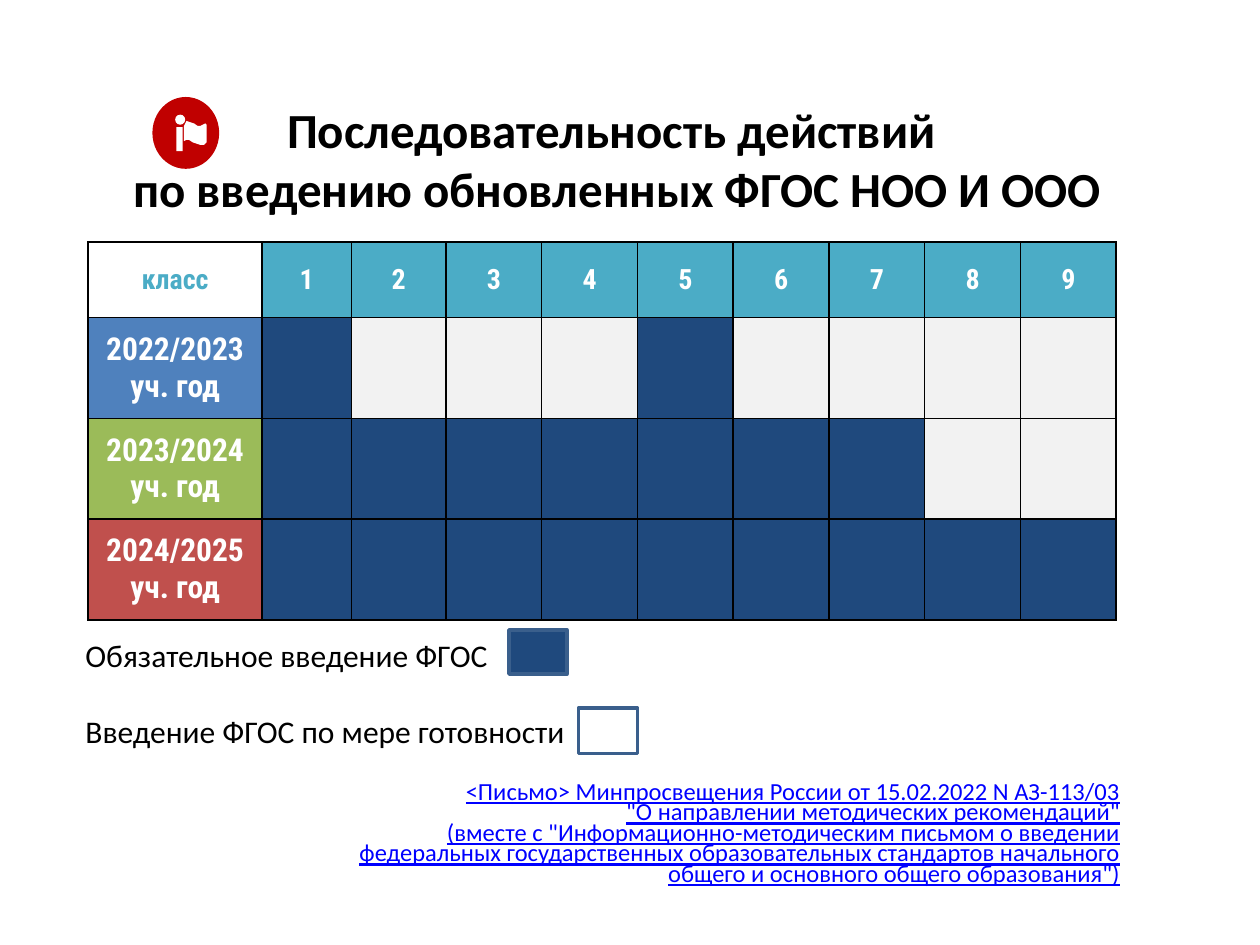
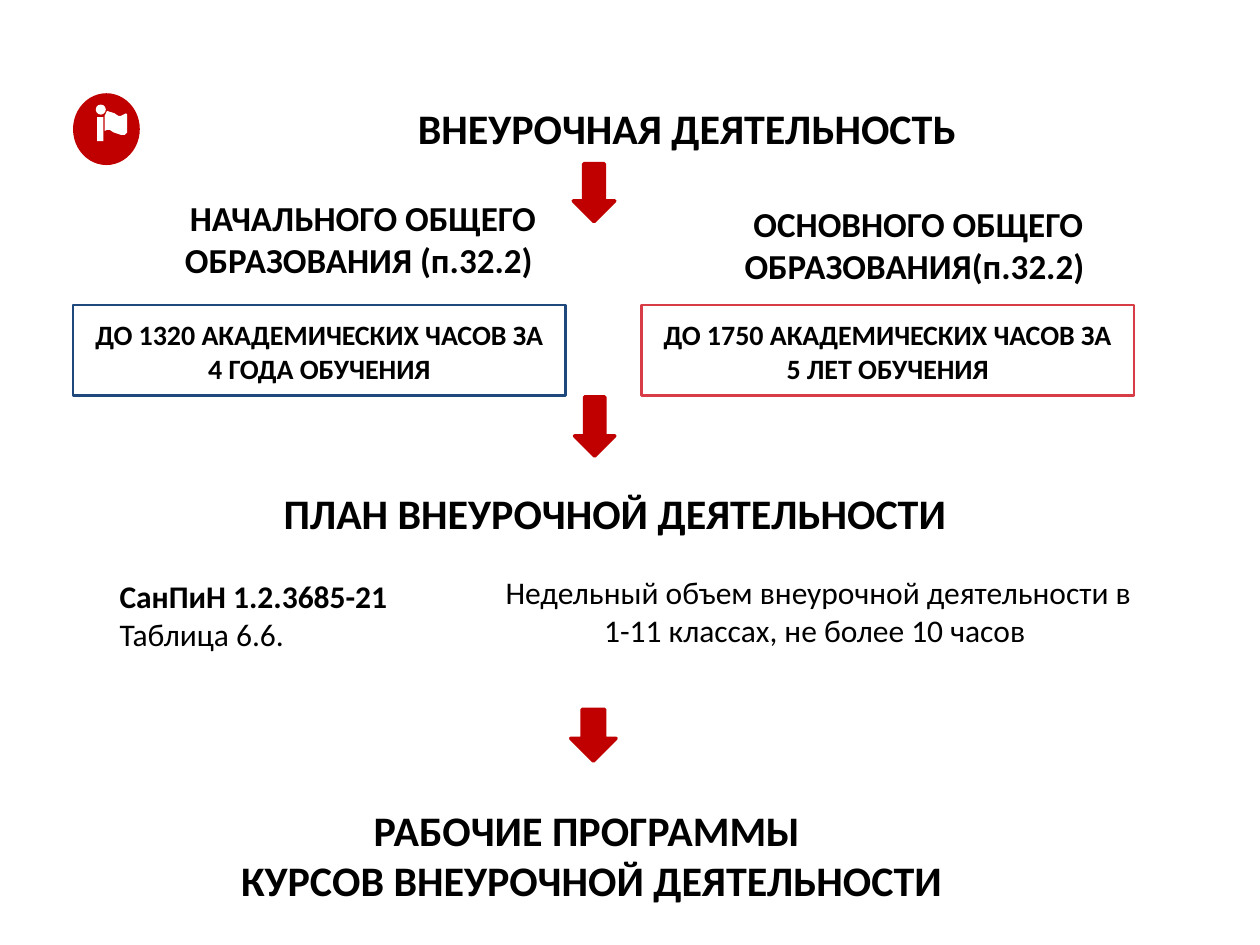
"""Build two slides on introducing the updated school education standards."""
from lxml import etree
from pptx import Presentation
from pptx import util as u
from pptx.dml.color import RGBColor
from pptx.enum import shapes, text
from pptx.oxml.ns import qn

RED, NAVY, BLACK, WHITE = "C00000", "1F497D", "000000", "FFFFFF"
TEAL, PALE, LINK, LEGEND_LINE = "4BACC6", "F2F2F2", "0000FF", "3A5F8C"
BODY_FONT, TABLE_FONT = "Calibri", "Roboto Condensed"
CENTER, LEFT, RIGHT = text.PP_ALIGN.CENTER, text.PP_ALIGN.LEFT, text.PP_ALIGN.RIGHT
TOP, MIDDLE = text.MSO_ANCHOR.TOP, text.MSO_ANCHOR.MIDDLE
RECTANGLE, OVAL = shapes.MSO_SHAPE.RECTANGLE, shapes.MSO_SHAPE.OVAL

TITLE = ["Последовательность действий ", "по введению обновленных ФГОС НОО И ООО"]
GRADES = range(1, 10)
SCHOOL_YEARS = [
    ("2022/2023 уч. год", "4F81BD", {1, 5}),
    ("2023/2024 уч. год", "9BBB59", set(range(1, 8))),
    ("2024/2025 уч. год", "C0504D", set(GRADES)),
]
COLUMN_WIDTHS = [1.38, 0.71, 0.75] + [0.76] * 7
ROW_HEIGHTS = [0.6] + [0.78] * 3
LEGEND = ["Обязательное введение ФГОС", "Введение ФГОС по мере готовности"]
LEGEND_KEYS = [((4.04, 5, 0.46, 0.35), NAVY), ((4.59, 5.62, 0.47, 0.36), WHITE)]
LETTER = (
    "<Письмо> Минпросвещения России от 15.02.2022 N АЗ-113/03",
    '"О направлении методических рекомендаций"',
    '(вместе с "Информационно-методическим письмом о введении федеральных '
    'государственных образовательных стандартов начального общего и основного '
    'общего образования")',
)

HEADINGS = [
    ((2.01, 0.71, 6.96, 0.62), 24, TOP, ["ВНЕУРОЧНАЯ ДЕЯТЕЛЬНОСТЬ "]),
    ((0.47, 1.46, 4.82, 0.83), 20, TOP, ["НАЧАЛЬНОГО ОБЩЕГО", "ОБРАЗОВАНИЯ (п.32.2) "]),
    ((4.88, 1.51, 4.82, 0.83), 20, TOP, ["ОСНОВНОГО ОБЩЕГО", "ОБРАЗОВАНИЯ(п.32.2) "]),
    ((1.4, 3.77, 6.96, 0.62), 24, TOP, ["ПЛАН ВНЕУРОЧНОЙ ДЕЯТЕЛЬНОСТИ"]),
    ((0.58, 6.3, 8.23, 0.97), 24, MIDDLE,
     ["РАБОЧИЕ ПРОГРАММЫ ", "КУРСОВ ВНЕУРОЧНОЙ ДЕЯТЕЛЬНОСТИ"]),
]
HOUR_LIMITS = [
    (0.58, NAVY, "ДО 1320 АКАДЕМИЧЕСКИХ ЧАСОВ ЗА 4 ГОДА ОБУЧЕНИЯ"),
    (5.09, "D83C47", "ДО 1750 АКАДЕМИЧЕСКИХ ЧАСОВ ЗА 5 ЛЕТ ОБУЧЕНИЯ"),
]
ARROWS = [(4.55, 1.3, 0.33, 0.46), (4.56, 3.15, 0.32, 0.47), (4.53, 5.63, 0.36, 0.41)]
WEEKLY_LIMIT = "Недельный объем внеурочной деятельности в 1-11 классах, не более 10 часов "
REGULATION = ["СанПиН 1.2.3685-21", "Таблица 6.6."]
FLAG_OUTLINE = [(0.02, 0), (0.05, 0.01), (0.08, 0.02), (0.11, 0.04), (0.13, 0.04),
                (0.15, 0.03), (0.17, 0.02), (0.18, 0.03), (0.18, 0.17), (0.16, 0.19),
                (0.13, 0.19), (0.1, 0.18), (0.07, 0.17), (0.04, 0.15), (0.02, 0.15),
                (0, 0.16), (0, 0.04)]


def color(code):
    return RGBColor.from_string(code)


def place(box):
    return [u.Inches(length) for length in box]


def write(paragraph, lines, size, ink=BLACK, bold=False, align=LEFT,
          font=BODY_FONT, underline=False):
    paragraph.alignment = align
    for index, line in enumerate(lines):
        if index:
            paragraph.add_line_break()
        run = paragraph.add_run()
        run.text = line
        run.font.size, run.font.name = u.Pt(size), font
        run.font.bold, run.font.underline = bold, underline
        run.font.color.rgb = color(ink)


def set_margins(target, side, vertical):
    target.margin_left = target.margin_right = u.Inches(side)
    target.margin_top = target.margin_bottom = u.Inches(vertical)


def prepare(shape, anchor=TOP, vertical=0.1):
    frame = shape.text_frame
    frame.word_wrap, frame.vertical_anchor = True, anchor
    set_margins(frame, 0.1, vertical)
    return frame


def add_text(slide, box, paragraphs, size, anchor=TOP, vertical=0.1, **style):
    frame = prepare(slide.shapes.add_textbox(*place(box)), anchor, vertical)
    for index, words in enumerate(paragraphs):
        paragraph = frame.add_paragraph() if index else frame.paragraphs[0]
        write(paragraph, [words], size, **style)
    return frame


def paint(shape, fill=None, line=None, width=1):
    shape.shadow.inherit = False
    if fill:
        shape.fill.solid()
        shape.fill.fore_color.rgb = color(fill)
    else:
        shape.fill.background()
    if line:
        shape.line.color.rgb = color(line)
        shape.line.width = u.Pt(width)
    else:
        shape.line.fill.background()


def add_shape(slide, kind, box, fill=None, line=None, width=1):
    shape = slide.shapes.add_shape(kind, *place(box))
    paint(shape, fill, line, width)
    return shape


def add_flag_badge(slide, left, top, figure_top):
    add_shape(slide, OVAL, (left, top, 0.53, 0.57), RED)
    add_shape(slide, OVAL, (left + 0.18, figure_top, 0.08, 0.08), WHITE)
    add_shape(slide, RECTANGLE, (left + 0.19, figure_top + 0.1, 0.05, 0.19), WHITE)
    points = [place((left + 0.25 + x, figure_top + 0.05 + y)) for x, y in FLAG_OUTLINE]
    builder = slide.shapes.build_freeform(*points[0])
    builder.add_line_segments(points[1:], close=True)
    paint(builder.convert_to_shape(), WHITE)


def style_cell(cell, fill=None):
    properties = cell._tc.get_or_add_tcPr()
    for side in ("lnL", "lnR", "lnT", "lnB"):
        border = etree.SubElement(properties, qn(f"a:{side}"), w=str(u.Pt(1)))
        solid = etree.SubElement(border, qn("a:solidFill"))
        etree.SubElement(solid, qn("a:srgbClr"), val=BLACK)
    if fill:
        cell.fill.solid()
        cell.fill.fore_color.rgb = color(fill)
    else:
        cell.fill.background()


def label_cell(cell, words, size, ink=WHITE):
    cell.vertical_anchor = MIDDLE
    set_margins(cell, 0.1, 0.1)
    write(cell.text_frame.paragraphs[0], [words], size, ink, True, CENTER, TABLE_FONT)


def add_schedule(slide):
    box = (0.7, 1.92, sum(COLUMN_WIDTHS), sum(ROW_HEIGHTS))
    table = slide.shapes.add_table(
        len(ROW_HEIGHTS), len(COLUMN_WIDTHS), *place(box)).table
    for column, width in zip(table.columns, COLUMN_WIDTHS):
        column.width = u.Inches(width)
    for row, height in zip(table.rows, ROW_HEIGHTS):
        row.height = u.Inches(height)
    style_cell(table.cell(0, 0))
    label_cell(table.cell(0, 0), "класс", 16, TEAL)
    for grade in GRADES:
        style_cell(table.cell(0, grade), TEAL)
        label_cell(table.cell(0, grade), str(grade), 16)
    for row, (year, fill, required) in enumerate(SCHOOL_YEARS, 1):
        style_cell(table.cell(row, 0), fill)
        label_cell(table.cell(row, 0), year, 18)
        for grade in GRADES:
            style_cell(table.cell(row, grade), NAVY if grade in required else PALE)


def build_schedule_slide(slide):
    add_flag_badge(slide, 1.21, 0.77, 0.91)
    add_text(slide, (0.8, 0.69, 8.19, 1), TITLE, 28, bold=True, align=CENTER)
    add_schedule(slide)
    legend = add_text(slide, (0.58, 5, 5.13, 1.01), LEGEND, 18, vertical=0.05)
    legend.paragraphs[1].space_before = u.Pt(22)
    for box, fill in LEGEND_KEYS:
        add_shape(slide, RECTANGLE, box, fill, LEGEND_LINE, 2)
    letter = prepare(slide.shapes.add_textbox(*place((2.49, 6.12, 6.5, 1.01))))
    letter.paragraphs[0].line_spacing = 0.7
    write(letter.paragraphs[0], LETTER, 14, LINK, align=RIGHT, underline=True)


def build_activity_slide(slide):
    for left, line, words in HOUR_LIMITS:
        shape = add_shape(slide, RECTANGLE, (left, 2.42, 3.91, 0.72), None, line, 1.5)
        write(prepare(shape).paragraphs[0], [words], 16, bold=True, align=CENTER)
    add_flag_badge(slide, 0.58, 0.74, 0.83)
    for box, size, anchor, lines in HEADINGS:
        add_text(slide, box, lines, size, anchor, bold=True, align=CENTER)
    for box in ARROWS:
        add_shape(slide, shapes.MSO_SHAPE.DOWN_ARROW, box, RED, RED, 2)
    add_text(slide, (3.9, 4.5, 5.19, 0.71), [WEEKLY_LIMIT], 18, vertical=0.05, align=CENTER)
    regulation = add_text(slide, (0.85, 4.53, 2.41, 0.71), REGULATION, 18, vertical=0.05)
    regulation.paragraphs[0].runs[0].font.bold = True


def main():
    presentation = Presentation()
    presentation.slide_width, presentation.slide_height = place((10, 7.5))
    for build in (build_schedule_slide, build_activity_slide):
        build(presentation.slides.add_slide(presentation.slide_layouts[6]))
    presentation.save("out.pptx")


if __name__ == "__main__":
    main()
